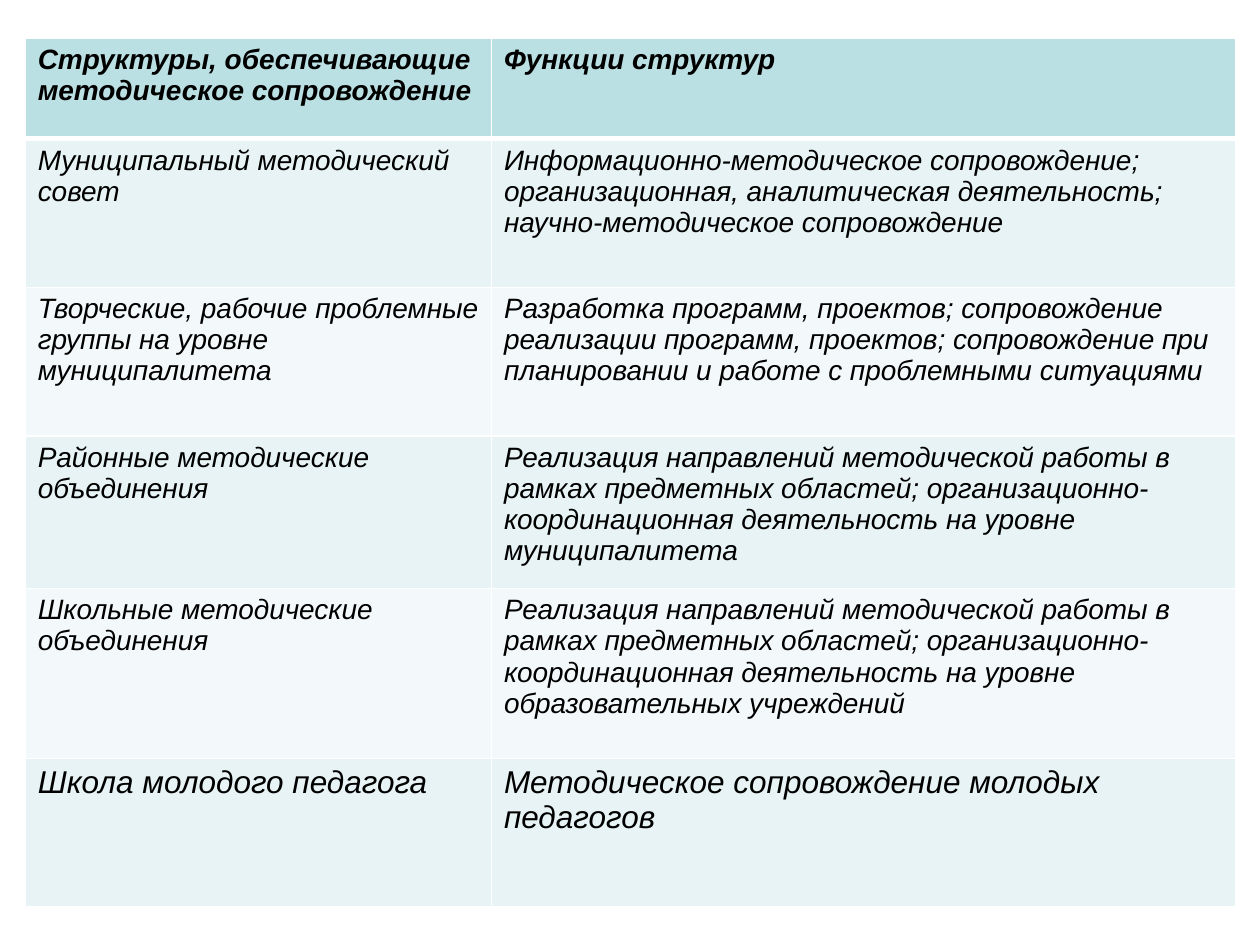
from lxml import etree
from pptx import Presentation
from pptx.dml.color import RGBColor
from pptx.oxml.ns import qn
from pptx.util import Inches, Pt

BLACK = RGBColor(0x00, 0x00, 0x00)
WHITE = RGBColor(0xFF, 0xFF, 0xFF)
HEADER_FILL = RGBColor(0xBB, 0xE0, 0xE3)
ODD_FILL = RGBColor(0xE7, 0xF3, 0xF4)
EVEN_FILL = RGBColor(0xF3, 0xF9, 0xFA)

COLUMN_WIDTHS = [3.7, 5.91]
ROW_HEIGHTS = [0.8, 1.18, 1.18, 1.21, 1.35, 1.18]
SUBJECT_WORK = ("Реализация направлений методической работы в рамках предметных областей; "
                "организационно-координационная деятельность на уровне ")
ROWS = [
    ("Структуры, обеспечивающие методическое сопровождение", "Функции структур"),
    ("Муниципальный методический совет",
     "Информационно-методическое сопровождение; организационная, аналитическая "
     "деятельность; научно-методическое сопровождение"),
    ("Творческие, рабочие проблемные группы на уровне муниципалитета",
     "Разработка программ, проектов; сопровождение реализации программ, проектов; "
     "сопровождение при планировании и работе с проблемными ситуациями"),
    ("Районные методические объединения", SUBJECT_WORK + "муниципалитета"),
    ("Школьные методические объединения", SUBJECT_WORK + "образовательных учреждений"),
    ("Школа молодого педагога", "Методическое сопровождение молодых педагогов"),
]


def write_text(cell, content, size=16, bold=False, color=BLACK):
    paragraph = cell.text_frame.paragraphs[0]
    run = paragraph.add_run()
    run.text = content
    run.font.name = "Arial"
    run.font.size = Pt(size)
    run.font.bold = bold
    run.font.italic = True
    run.font.color.rgb = color


def add_border(cell, position, side, width):
    line = etree.Element(qn(f"a:ln{side}"), w=str(Pt(width)))
    fill = etree.SubElement(line, qn("a:solidFill"))
    etree.SubElement(fill, qn("a:srgbClr"), val=str(WHITE))
    cell._tc.get_or_add_tcPr().insert(position, line)


presentation = Presentation()
presentation.slide_width = Inches(10)
presentation.slide_height = Inches(7.5)
slide = presentation.slides.add_slide(presentation.slide_layouts[6])

table = slide.shapes.add_table(
    len(ROWS), len(COLUMN_WIDTHS), Inches(0.2), Inches(0.3),
    Inches(sum(COLUMN_WIDTHS)), Inches(sum(ROW_HEIGHTS))).table
for column, width in zip(table.columns, COLUMN_WIDTHS):
    column.width = Inches(width)

for row_index, (height, contents) in enumerate(zip(ROW_HEIGHTS, ROWS)):
    table.rows[row_index].height = Inches(height)
    is_header = row_index == 0
    is_last = row_index == len(ROWS) - 1
    band_fill = ODD_FILL if row_index % 2 else EVEN_FILL
    border_widths = {"L": 1, "R": 1, "T": 3 if row_index == 1 else 1, "B": 3 if is_header else 1}
    for column_index, content in enumerate(contents):
        cell = table.cell(row_index, column_index)
        write_text(cell, content, size=18 if is_last else 16, bold=is_header)
        cell.fill.solid()
        cell.fill.fore_color.rgb = HEADER_FILL if is_header else band_fill
        for position, (side, width) in enumerate(border_widths.items()):
            add_border(cell, position, side, width)

presentation.save("out.pptx")
